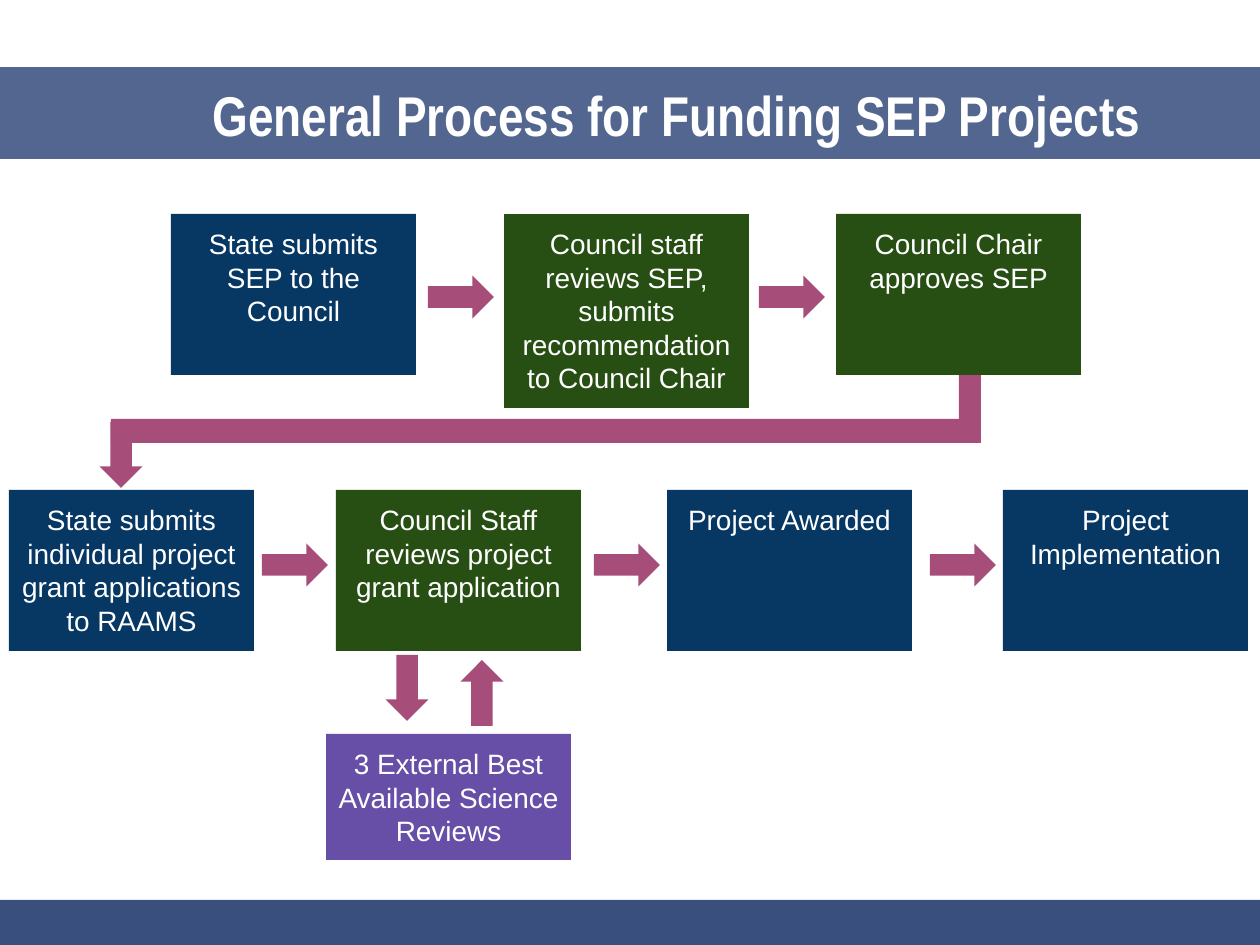
from pptx import Presentation
from pptx.dml.color import RGBColor
from pptx.enum.shapes import MSO_SHAPE
from pptx.enum.text import MSO_ANCHOR, PP_ALIGN
from pptx.util import Pt
from lxml import etree

RECT, ARROW = MSO_SHAPE.RECTANGLE, MSO_SHAPE.RIGHT_ARROW
CENTER, LEFT = PP_ALIGN.CENTER, PP_ALIGN.LEFT
TOP, MIDDLE = MSO_ANCHOR.TOP, MSO_ANCHOR.MIDDLE
EMU_PER_PX = 914400 / 126

STATE, COUNCIL, REVIEW = "073763", "274E13", "674EA7"
FLOW, BAND, WHITE = "A64D79", "39507F", "FFFFFF"
STEP_W, STEP_H = 245, 161
ARROW_W, ARROW_H = 66, 43
INSET = 12.6

TITLE = "General Process for Funding SEP Projects"
BANDS = [((0, 900, 1260, 48), 100), ((0, 67, 1260, 92), 87)]
STEPS = [
    (171, 214, STEP_H, STATE, "State submits SEP to the Council"),
    (504, 214, 194, COUNCIL,
     "Council staff reviews SEP, submits recommendation to Council Chair"),
    (836, 214, STEP_H, COUNCIL, "Council Chair approves SEP"),
    (9, 490, STEP_H, STATE,
     "State submits individual project grant applications to RAAMS"),
    (336, 490, STEP_H, COUNCIL, "Council Staff reviews project grant application"),
    (667, 490, STEP_H, STATE, "Project Awarded"),
    (1003, 490, STEP_H, STATE, "Project Implementation"),
    (326, 734, 126, REVIEW, "3 External Best Available Science Reviews"),
]
RETURN_PATH = [(959, 297, 22, 126), (111, 419, 870, 24)]
ARROW_CENTERS = [
    (461, 297, 0), (792, 297, 0),
    (295, 565, 0), (627, 565, 0), (963, 565, 0),
    (121, 455, 90), (407, 688, 90), (482, 693, 270),
]


def px(length):
    return round(length * EMU_PER_PX)


def color(hex_code):
    return RGBColor.from_string(hex_code)


def add_block(slide, preset, frame, fill):
    block = slide.shapes.add_shape(preset, *map(px, frame))
    block.shadow.inherit = False
    block.fill.solid()
    block.fill.fore_color.rgb = color(fill)
    block.line.fill.background()
    return block


def set_opacity(block, percent):
    hue = block.fill._xPr.solidFill.srgbClr
    namespace = etree.QName(hue).namespace
    alpha = etree.SubElement(hue, f"{{{namespace}}}alpha")
    alpha.set("val", str(percent * 1000))


def write(block, wording, font_name, size, align, anchor, bold=False):
    frame = block.text_frame
    frame.word_wrap = True
    frame.vertical_anchor = anchor
    frame.margin_left = frame.margin_right = px(INSET)
    frame.margin_top = frame.margin_bottom = px(INSET)
    paragraph = frame.paragraphs[0]
    paragraph.text = wording
    paragraph.alignment = align
    font = paragraph.font
    font.name, font.size, font.bold = font_name, Pt(size), bold
    font.color.rgb = color(WHITE)


def main():
    deck = Presentation()
    deck.slide_width, deck.slide_height = px(1260), px(945)
    slide = deck.slides.add_slide(deck.slide_layouts[6])

    for frame, opacity in BANDS:
        band = add_block(slide, RECT, frame, BAND)
        if opacity < 100:
            set_opacity(band, opacity)

    title = slide.shapes.add_textbox(*map(px, (200, 35, 1172, 158)))
    write(title, TITLE, "Arial Narrow", 32, LEFT, MIDDLE, bold=True)

    for frame in RETURN_PATH:
        add_block(slide, RECT, frame, FLOW)

    for x, y, height, fill, wording in STEPS:
        step = add_block(slide, RECT, (x, y, STEP_W, height), fill)
        write(step, wording, "Arial", 16, CENTER, TOP)

    for x, y, angle in ARROW_CENTERS:
        frame = (x - ARROW_W / 2, y - ARROW_H / 2, ARROW_W, ARROW_H)
        add_block(slide, ARROW, frame, FLOW).rotation = angle

    deck.save("out.pptx")


if __name__ == "__main__":
    main()
